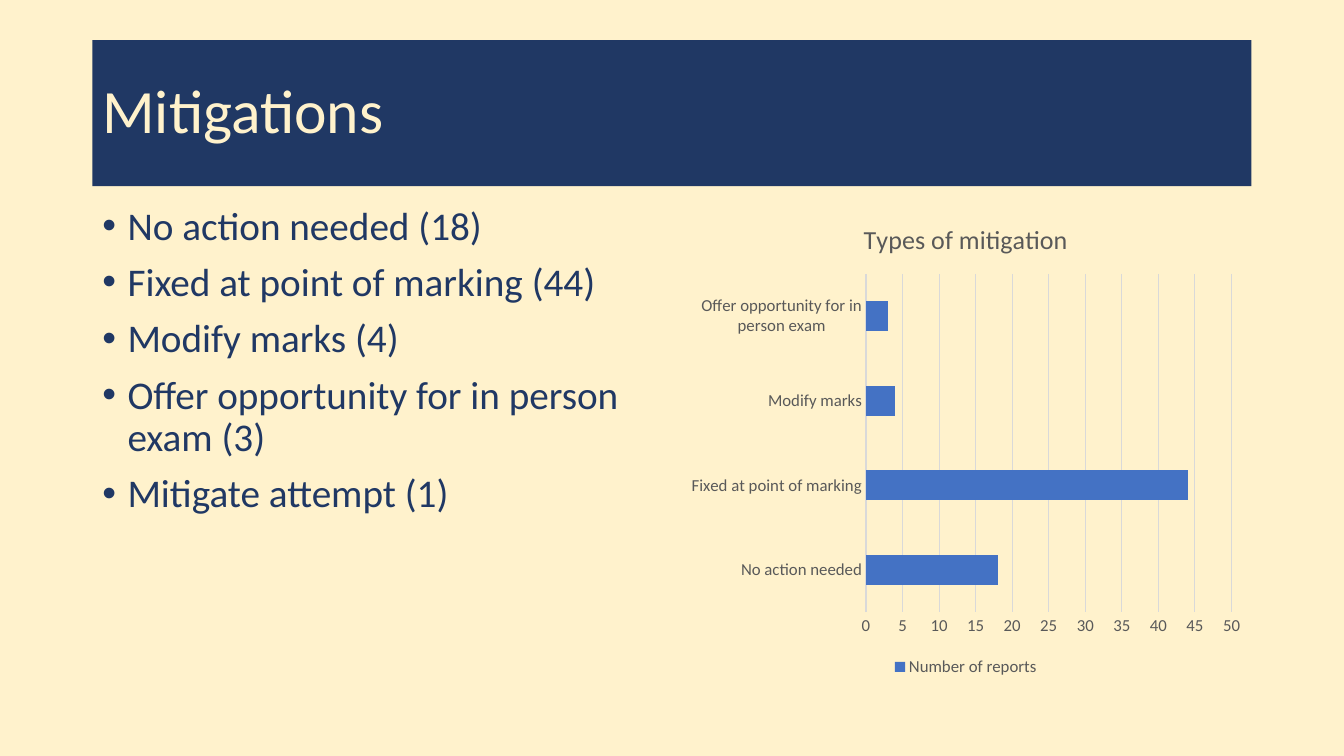
from dataclasses import dataclass

from lxml.etree import SubElement
from pptx import Presentation
from pptx.chart.data import CategoryChartData
from pptx.dml.color import RGBColor as RGB
from pptx.enum.chart import XL_CHART_TYPE as ChartType
from pptx.enum.chart import XL_LEGEND_POSITION as LegendPos
from pptx.enum.chart import XL_TICK_MARK as Tick
from pptx.enum.shapes import MSO_SHAPE as Shape
from pptx.enum.text import MSO_ANCHOR as Anchor
from pptx.enum.text import PP_ALIGN as Align
from pptx.oxml.ns import qn
from pptx.util import Cm, Pt


@dataclass(frozen=True)
class Theme:
    font: str = "Calibri"
    cream: RGB = RGB(0xFF, 0xF2, 0xCC)
    navy: RGB = RGB(0x20, 0x38, 0x64)
    bar: RGB = RGB(0x44, 0x72, 0xC4)
    grey: RGB = RGB(0x59, 0x59, 0x59)
    grid: RGB = RGB(0xD9, 0xD9, 0xD9)
    title: Pt = Pt(44)
    body: Pt = Pt(28)
    chart_title: Pt = Pt(18.6)
    label: Pt = Pt(12)


THEME = Theme()
LEFT, TOP, WIDTH = Cm(2.33), Cm(5.07), Cm(29.21)
COLUMN, HEIGHT = Cm(14.4), Cm(12.09)

MITIGATIONS = {
    "No action needed": 18,
    "Fixed at point of marking": 44,
    "Modify marks": 4,
    "Offer opportunity for in person exam": 3,
    "Mitigate attempt": 1,
}
CHARTED = list(MITIGATIONS)[:4]


def set_all(target, formats):
    for name, value in formats.items():
        setattr(target, name, value)


def set_font(font, size, color):
    set_all(font, {"name": THEME.font, "size": size, "bold": False})
    font.color.rgb = color


def set_line(line, color):
    line.color.rgb = color
    line.width = Pt(0.75)


def add_bullet(p):
    pPr = p._p.get_or_add_pPr()
    pPr.set("marL", str(Cm(0.635)))
    pPr.set("indent", str(-Cm(0.635)))
    SubElement(pPr, qn("a:buFont")).set("typeface", "Arial")
    SubElement(pPr, qn("a:buChar")).set("char", "•")


def add_title(s, text):
    sp = s.shapes.add_shape(Shape.RECTANGLE, LEFT, Cm(1.01), WIDTH, Cm(3.68))
    sp.shadow.inherit = False
    sp.fill.solid()
    sp.fill.fore_color.rgb = THEME.navy
    sp.line.fill.background()
    tf = sp.text_frame
    set_all(tf, {"word_wrap": True, "vertical_anchor": Anchor.MIDDLE})
    p = tf.paragraphs[0]
    set_all(p, {"text": text, "alignment": Align.LEFT, "line_spacing": 0.9})
    set_font(p.runs[0].font, THEME.title, THEME.cream)


def add_bullets(s, lines):
    tf = s.shapes.add_textbox(LEFT, TOP, COLUMN, HEIGHT).text_frame
    tf.word_wrap = True
    for i, line in enumerate(lines):
        p = tf.add_paragraph() if i else tf.paragraphs[0]
        set_all(p, {"text": line, "line_spacing": 0.9, "space_before": Pt(10)})
        add_bullet(p)
        set_font(p.runs[0].font, THEME.body, THEME.navy)


def style_axis(axis):
    set_all(axis, {"major_tick_mark": Tick.NONE, "minor_tick_mark": Tick.NONE})
    set_font(axis.tick_labels.font, THEME.label, THEME.grey)


def add_bar_chart(s, title, series_name, categories, values):
    data = CategoryChartData()
    data.categories = categories
    data.add_series(series_name, values)
    chart = s.shapes.add_chart(ChartType.BAR_CLUSTERED, LEFT + WIDTH - COLUMN,
                               TOP, COLUMN, HEIGHT, data).chart
    set_font(chart.font, THEME.label, THEME.grey)

    # Title and legend
    chart.has_title = True
    tf = chart.chart_title.text_frame
    tf.text = title
    set_font(tf.paragraphs[0].runs[0].font, THEME.chart_title, THEME.grey)
    chart.has_legend = True
    set_all(chart.legend, {"position": LegendPos.BOTTOM, "include_in_layout": False})
    set_font(chart.legend.font, THEME.label, THEME.grey)

    # Axes
    cat, val = chart.category_axis, chart.value_axis
    style_axis(cat)
    style_axis(val)
    set_line(cat.format.line, THEME.grid)
    val.format.line.fill.background()
    set_all(val, {"minimum_scale": 0, "maximum_scale": 50, "major_unit": 5,
                  "has_major_gridlines": True})
    set_line(val.major_gridlines.format.line, THEME.grid)

    # Bars
    plot = chart.plots[0]
    set_all(plot, {"gap_width": 182, "vary_by_categories": False})
    fill = plot.series[0].format.fill
    fill.solid()
    fill.fore_color.rgb = THEME.bar


def main():
    prs = Presentation()
    set_all(prs, {"slide_width": Cm(33.87), "slide_height": Cm(19.05)})
    s = prs.slides.add_slide(prs.slide_layouts[6])
    s.background.fill.solid()
    s.background.fill.fore_color.rgb = THEME.cream

    add_title(s, "Mitigations")
    add_bullets(s, [f"{name} ({count})" for name, count in MITIGATIONS.items()])
    add_bar_chart(s, "Types of mitigation", "Number of reports", CHARTED,
                  [MITIGATIONS[name] for name in CHARTED])
    prs.save("out.pptx")


if __name__ == "__main__":
    main()
